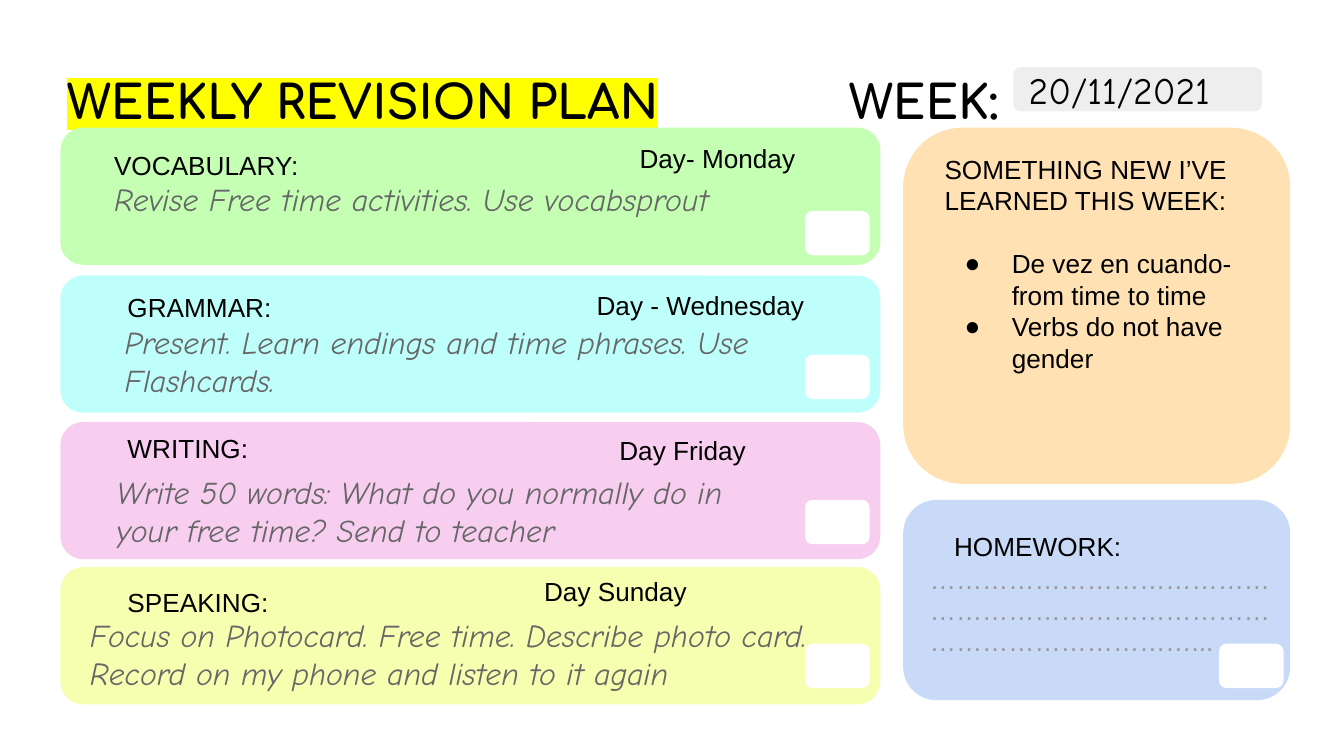
from dataclasses import dataclass

from lxml.etree import SubElement
from pptx import Presentation
from pptx.dml.color import RGBColor
from pptx.enum.shapes import MSO_SHAPE as Shape
from pptx.enum.text import MSO_ANCHOR as Anchor, MSO_AUTO_SIZE as AutoSize, PP_ALIGN as Align
from pptx.oxml.ns import qn
from pptx.util import Emu, Pt

PX = 9144  # EMU per px, 100 px to the inch
INSET = 10

BLACK = RGBColor(0x00, 0x00, 0x00)
WHITE = RGBColor(0xFF, 0xFF, 0xFF)
DARK_GREY = RGBColor(0x66, 0x66, 0x66)
MID_GREY = RGBColor(0x99, 0x99, 0x99)
PALE_GREY = RGBColor(0xEE, 0xEE, 0xEE)
BRIGHT_YELLOW = RGBColor(0xFF, 0xFF, 0x00)
GREEN = RGBColor(0xC4, 0xFF, 0xB4)
CYAN = RGBColor(0xBF, 0xFF, 0xFB)
PINK = RGBColor(0xF8, 0xCE, 0xF0)
YELLOW = RGBColor(0xF6, 0xFF, 0xAF)
ORANGE = RGBColor(0xFF, 0xE1, 0xB3)
BLUE = RGBColor(0xC9, 0xDA, 0xF8)

HEADING = {"name": "Comfortaa", "size": Pt(25), "bold": True}
LABEL = {"name": "Arial", "size": Pt(14)}
DATE = {"name": "Comic Neue", "size": Pt(20)}
TASK = {"name": "Comic Neue", "size": Pt(17), "italic": True}


@dataclass(frozen=True)
class Box:
    left: int
    top: int
    width: int
    height: int

    def emu(self) -> list[Emu]:
        return [Emu(v * PX) for v in (self.left, self.top, self.width, self.height)]


@dataclass(frozen=True)
class Skill:
    name: str
    name_at: tuple[int, int]
    task: str
    task_box: Box
    day: str
    day_box: Box
    top: int
    color: RGBColor


SKILLS = [
    Skill("VOCABULARY:", (75, 101),
          "Revise Free time activities. Use vocabsprout", Box(75, 124, 469, 43),
          "Day- Monday", Box(466, 96, 151, 44), 95, GREEN),
    Skill("GRAMMAR:", (85, 207),
          "Present. Learn endings and time phrases. Use Flashcards.", Box(83, 230, 516, 43),
          "Day - Wednesday", Box(434, 205, 205, 44), 205, CYAN),
    Skill("WRITING:", (85, 312),
          "Write 50 words: What do you normally do in your free time? Send to teacher",
          Box(77, 342, 516, 43),
          "Day Friday", Box(451, 313, 185, 44), 314, PINK),
    Skill("SPEAKING:", (85, 426),
          "Focus on Photocard. Free time. Describe photo card. "
          "Record on my phone and listen to it again", Box(57, 448, 589, 43),
          "Day Sunday", Box(395, 418, 226, 44), 422, YELLOW),
]
LEARNED = ["De vez en cuando- from time to time", "Verbs do not have gender"]
TICK_TOP, TICK_STEP = 157, 107.4


def write(sp, text: str, font: dict, color: RGBColor = BLACK, anchor=Anchor.TOP):
    """Fill a shape with one left-aligned paragraph and return its text frame."""
    tf = sp.text_frame
    frame = {"word_wrap": True, "auto_size": AutoSize.NONE, "vertical_anchor": anchor}
    frame |= {f"margin_{side}": Emu(INSET * PX) for side in ("left", "top", "right", "bottom")}
    for key, value in frame.items():
        setattr(tf, key, value)
    add_run(tf.paragraphs[0], text, font, color)
    return tf


def add_run(p, text: str, font: dict, color: RGBColor = BLACK) -> None:
    p.alignment = Align.LEFT
    r = p.add_run()
    r.text = text
    for key, value in font.items():
        setattr(r.font, key, value)
    r.font.color.rgb = color


def add_text(s, box: Box, text: str, font: dict, color: RGBColor = BLACK):
    return write(s.shapes.add_textbox(*box.emu()), text, font, color)


def add_card(s, box: Box, color: RGBColor):
    sp = s.shapes.add_shape(Shape.ROUNDED_RECTANGLE, *box.emu())
    sp.shadow.inherit = False
    sp.fill.solid()
    sp.fill.fore_color.rgb = color
    sp.line.fill.background()
    return sp


def highlight(r, color: RGBColor) -> None:
    rPr = r.font._element
    mark = SubElement(rPr, qn("a:highlight"))
    SubElement(mark, qn("a:srgbClr"), val=str(color))
    rPr.find(qn("a:solidFill")).addnext(mark)


def add_bullet(tf, text: str) -> None:
    p = tf.add_paragraph()
    add_run(p, text, LABEL)
    pPr = p._p.get_or_add_pPr()
    pPr.set("marL", str(50 * PX))
    pPr.set("indent", str(-35 * PX))
    color = SubElement(pPr, qn("a:buClr"))
    SubElement(color, qn("a:srgbClr"), val=str(BLACK))
    SubElement(pPr, qn("a:buFont"), typeface="Arial")
    SubElement(pPr, qn("a:buChar"), char="●")


def add_header(s) -> None:
    title = s.shapes.title
    title.left, title.top, title.width, title.height = Box(40, 44, 599, 83).emu()
    tf = write(title, "WEEKLY REVISION PLAN", HEADING)
    highlight(tf.paragraphs[0].runs[0], BRIGHT_YELLOW)
    add_text(s, Box(622, 44, 139, 43), "WEEK:", HEADING)
    date = add_card(s, Box(754, 50, 185, 33), PALE_GREY)
    write(date, "20/11/2021", DATE, anchor=Anchor.MIDDLE)


def add_tick_box(s, left: int, row: int) -> None:
    add_card(s, Box(left, round(TICK_TOP + row * TICK_STEP), 48, 33), WHITE)


def add_skill(s, row: int, skill: Skill) -> None:
    add_card(s, Box(45, skill.top, 610, 102), skill.color)
    add_text(s, Box(*skill.name_at, 161, 31), skill.name, LABEL)
    add_tick_box(s, 599, row)
    add_text(s, skill.task_box, skill.task, TASK, DARK_GREY)
    add_text(s, skill.day_box, skill.day, LABEL)


def add_learned(s) -> None:
    add_card(s, Box(672, 95, 288, 265), ORANGE)
    tf = add_text(s, Box(693, 104, 246, 31), "SOMETHING NEW I’VE LEARNED THIS WEEK:", LABEL)
    tf.paragraphs[0].space_after = Pt(17)
    for item in LEARNED:
        add_bullet(tf, item)


def add_homework(s) -> None:
    add_card(s, Box(672, 372, 288, 149), BLUE)
    add_text(s, Box(700, 385, 161, 31), "HOMEWORK:", LABEL)
    add_tick_box(s, 907, 3)
    add_text(s, Box(682, 409, 278, 56), "…" * 36 + "...", LABEL, MID_GREY)


def main() -> None:
    prs = Presentation()
    prs.slide_width = Emu(1000 * PX)
    prs.slide_height = Emu(prs.slide_width * 9 // 16)
    s = prs.slides.add_slide(prs.slide_layouts[5])
    add_header(s)
    for row, skill in enumerate(SKILLS):
        add_skill(s, row, skill)
    add_learned(s)
    add_homework(s)
    prs.save("out.pptx")


if __name__ == "__main__":
    main()
